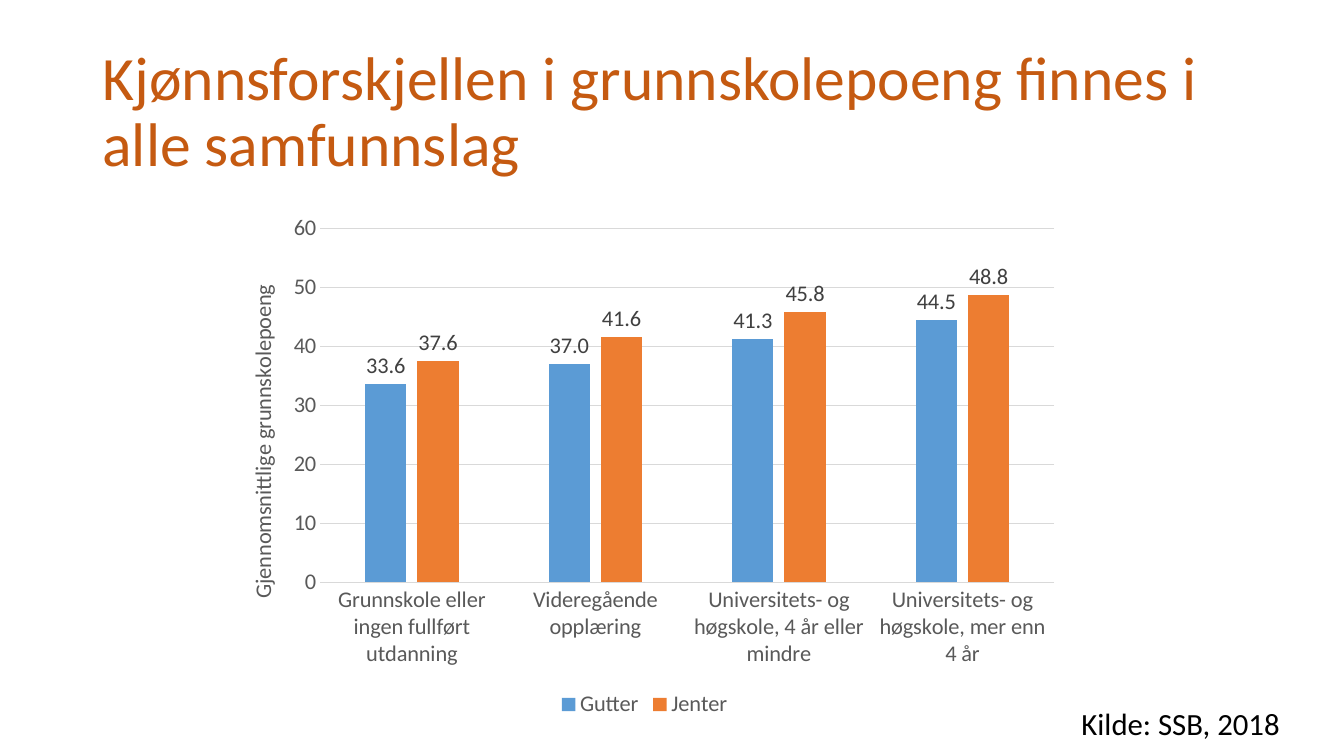
from dataclasses import dataclass

from lxml.etree import SubElement
from pptx import Presentation
from pptx.chart.data import CategoryChartData
from pptx.dml.color import RGBColor
from pptx.enum.chart import (XL_CHART_TYPE, XL_LABEL_POSITION,
                             XL_LEGEND_POSITION, XL_TICK_MARK)
from pptx.enum.text import MSO_ANCHOR
from pptx.oxml.ns import qn
from pptx.text.text import Font
from pptx.util import Pt

FONT = "Calibri"
CHART_TEXT_SIZE = 16
COLOURS = {
    "title": "C55A11",
    "source": "000000",
    "axis": "595959",
    "label": "404040",
    "grid": "D9D9D9",
    "boys": "5B9BD5",
    "girls": "ED7D31",
}


@dataclass
class PupilGroup:
    name: str
    points: tuple[float, ...]
    colour: str


EDUCATION_LEVELS = (
    "Grunnskole eller ingen fullført utdanning",
    "Videregående opplæring",
    "Universitets- og høgskole, 4 år eller mindre",
    "Universitets- og høgskole, mer enn 4 år",
)
PUPIL_GROUPS = (
    PupilGroup("Gutter", (33.6, 37.0, 41.3, 44.5), "boys"),
    PupilGroup("Jenter", (37.6, 41.6, 45.8, 48.8), "girls"),
)


def rgb(colour: str) -> RGBColor:
    return RGBColor.from_string(COLOURS[colour])


def style_font(font: Font, size: float, colour: str) -> None:
    font.name = FONT
    font.size = Pt(size)
    font.bold = False
    font.color.rgb = rgb(colour)


def set_layout(parent, index: int, **values: float | str) -> None:
    """Give a chart part a manual layout, as fractions of the chart."""
    layout = parent.find(qn("c:layout"))
    if layout is not None:
        parent.remove(layout)
    layout = parent.makeelement(qn("c:layout"))
    parent.insert(index, layout)
    manual = SubElement(layout, qn("c:manualLayout"))
    for name, value in values.items():
        SubElement(manual, qn(f"c:{name}")).set("val", str(value))


def add_points_chart(slide) -> None:
    data = CategoryChartData(number_format="0.0")
    data.categories = EDUCATION_LEVELS
    for group in PUPIL_GROUPS:
        data.add_series(group.name, group.points)
    chart = slide.shapes.add_chart(
        XL_CHART_TYPE.COLUMN_CLUSTERED, Pt(155.5), Pt(144.7), Pt(609.8), Pt(371.5), data
    ).chart
    style_font(chart.font, CHART_TEXT_SIZE, "axis")
    chart.has_title = False
    chart.has_legend = True
    chart.legend.position = XL_LEGEND_POSITION.BOTTOM
    chart.legend.include_in_layout = False
    style_font(chart.legend.font, CHART_TEXT_SIZE, "axis")

    columns = chart.plots[0]
    columns.gap_width = 219
    columns.overlap = -27
    columns.vary_by_categories = False
    for series, group in zip(columns.series, PUPIL_GROUPS):
        series.format.fill.solid()
        series.format.fill.fore_color.rgb = rgb(group.colour)
        labels = series.data_labels
        labels.show_value = True
        labels.number_format = "0.0"
        labels.number_format_is_linked = False
        labels.position = XL_LABEL_POSITION.OUTSIDE_END
        style_font(labels.font, CHART_TEXT_SIZE, "label")

    levels, points = chart.category_axis, chart.value_axis
    for axis in (levels, points):
        axis.major_tick_mark = axis.minor_tick_mark = XL_TICK_MARK.NONE
        style_font(axis.tick_labels.font, CHART_TEXT_SIZE, "axis")
    points.minimum_scale, points.maximum_scale, points.major_unit = 0, 60, 10
    points.tick_labels.number_format = "0"
    points.tick_labels.number_format_is_linked = False
    points.format.line.fill.background()
    points.has_major_gridlines = True
    for line in (levels.format.line, points.major_gridlines.format.line):
        line.color.rgb = rgb("grid")
        line.width = Pt(0.75)

    heading = points.axis_title.text_frame
    name = heading.paragraphs[0].add_run()
    name.text = "Gjennomsnittlige grunnskolepoeng"
    style_font(name.font, CHART_TEXT_SIZE, "axis")
    body = heading._txBody.find(qn("a:bodyPr"))
    body.set("rot", "-5400000")
    body.set("vert", "horz")
    set_layout(points.axis_title._element, 1,
               xMode="edge", yMode="edge", x=0.03, y=0.15)
    set_layout(columns._element.getparent(), 0, layoutTarget="inner",
               xMode="edge", yMode="edge", x=0.12, y=0.05, w=0.86, h=0.68)


def add_title(slide) -> None:
    title = slide.shapes.title
    title.left, title.top, title.width, title.height = Pt(66), Pt(28.8), Pt(828), Pt(104.4)
    frame = title.text_frame
    frame.word_wrap = True
    frame.vertical_anchor = MSO_ANCHOR.MIDDLE
    paragraph = frame.paragraphs[0]
    paragraph.line_spacing = 0.9
    # The left alignment replaces the centring of the layout.
    paragraph._p.get_or_add_pPr().set("algn", "l")
    heading = paragraph.add_run()
    heading.text = "Kjønnsforskjellen i grunnskolepoeng finnes i alle samfunnslag"
    style_font(heading.font, 44, "title")


def add_source(slide) -> None:
    frame = slide.shapes.add_textbox(Pt(765.4), Pt(499.7), Pt(185.8), Pt(33.8)).text_frame
    frame.word_wrap = True
    source = frame.paragraphs[0].add_run()
    source.text = "Kilde: SSB, 2018"
    style_font(source.font, 22, "source")


def main() -> None:
    presentation = Presentation()
    presentation.slide_width, presentation.slide_height = Pt(960), Pt(540)
    slide = presentation.slides.add_slide(presentation.slide_layouts.get_by_name("Title Only"))
    add_title(slide)
    add_points_chart(slide)
    add_source(slide)
    presentation.save("out.pptx")


if __name__ == "__main__":
    main()
